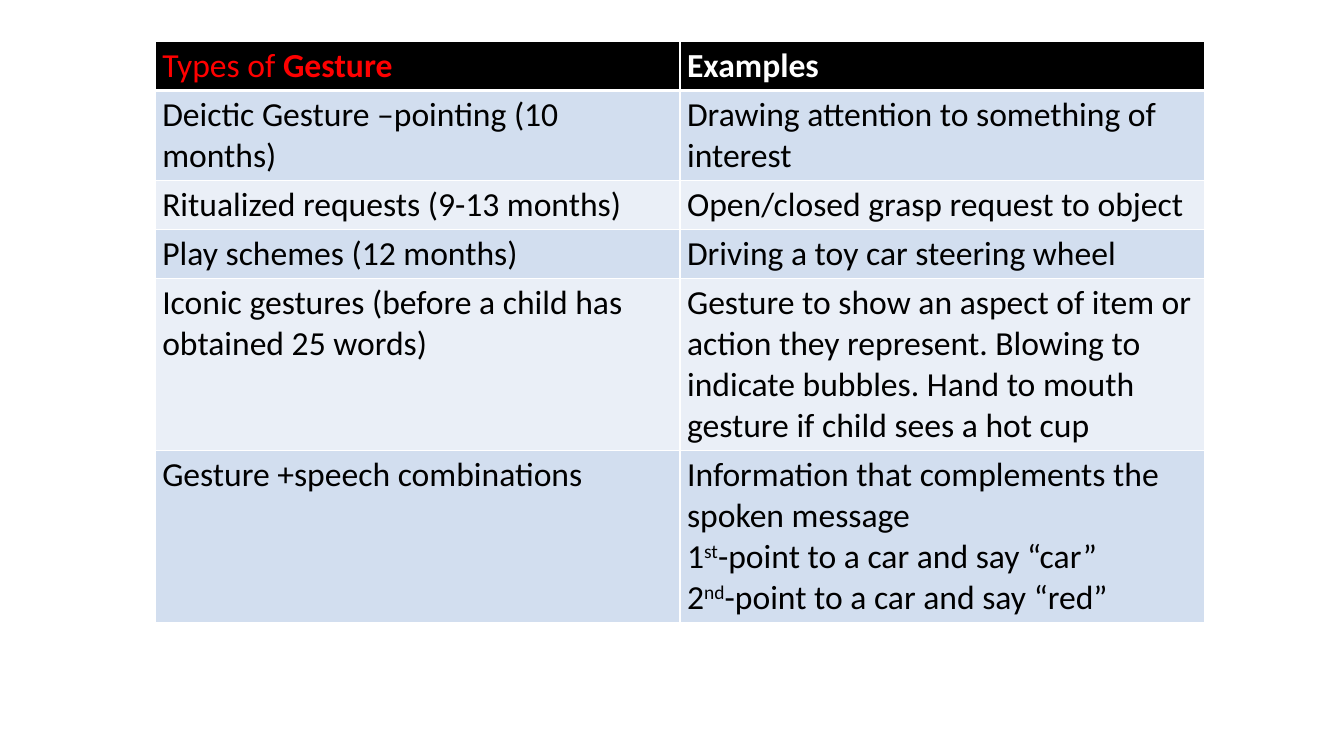
from dataclasses import dataclass

from lxml.etree import SubElement
from pptx import Presentation
from pptx.dml.color import RGBColor
from pptx.oxml.ns import qn
from pptx.table import _Cell
from pptx.util import Inches, Length, Pt

BLACK = RGBColor(0x00, 0x00, 0x00)
WHITE = RGBColor(0xFF, 0xFF, 0xFF)
RED = RGBColor(0xFF, 0x00, 0x00)
BAND_DARK = RGBColor(0xD2, 0xDE, 0xEF)
BAND_LIGHT = RGBColor(0xEA, 0xEF, 0xF7)

SLIDE_WIDTH = Inches(13.33)
SLIDE_HEIGHT = Inches(7.5)
THIN, THICK = Pt(1), Pt(3)


@dataclass(frozen=True)
class Span:
    text: str
    color: RGBColor = BLACK
    bold: bool = False
    raised: bool = False


Paragraphs = list[list[Span]]


@dataclass(frozen=True)
class GestureRow:
    height: float
    kind: Paragraphs
    example: Paragraphs


def plain(text: str) -> Paragraphs:
    return [[Span(text)]]


def ordinal(number: str, suffix: str, rest: str) -> list[Span]:
    return [Span(number), Span(suffix, raised=True), Span(rest)]


ROWS = [
    GestureRow(
        0.05,
        [[Span("Types of ", RED), Span("Gesture", RED, bold=True)]],
        [[Span("Examples", WHITE, bold=True)]],
    ),
    GestureRow(
        0.113,
        plain("Deictic Gesture –pointing (10 months)"),
        plain("Drawing attention to something of interest"),
    ),
    GestureRow(
        0.064,
        plain("Ritualized requests (9-13 months)"),
        plain("Open/closed grasp request to object"),
    ),
    GestureRow(
        0.064,
        plain("Play schemes (12 months)"),
        plain("Driving a toy car steering wheel"),
    ),
    GestureRow(
        0.21,
        plain("Iconic gestures (before a child has obtained 25 words)"),
        plain(
            "Gesture to show an aspect of item or action they represent. "
            "Blowing to indicate bubbles. Hand to mouth gesture if child sees a hot cup"
        ),
    ),
    GestureRow(
        0.21,
        plain("Gesture +speech combinations"),
        [
            [Span("Information that complements the spoken message")],
            ordinal("1", "st", "-point to a car and say “car”"),
            ordinal("2", "nd", "-point to a car and say “red”"),
        ],
    ),
]


def across(share: float) -> Length:
    return Length(round(SLIDE_WIDTH * share))


def down(share: float) -> Length:
    return Length(round(SLIDE_HEIGHT * share))


def draw_borders(cell: _Cell, top: Length, bottom: Length) -> None:
    properties = cell._tc.get_or_add_tcPr()
    for side, width in (("L", THIN), ("R", THIN), ("T", top), ("B", bottom)):
        line = SubElement(properties, qn(f"a:ln{side}"), w=str(width))
        fill = SubElement(line, qn("a:solidFill"))
        SubElement(fill, qn("a:srgbClr"), val=str(WHITE))


def write_text(cell: _Cell, paragraphs: Paragraphs) -> None:
    frame = cell.text_frame
    for index, spans in enumerate(paragraphs):
        para = frame.add_paragraph() if index else frame.paragraphs[0]
        for span in spans:
            run = para.add_run()
            run.text = span.text
            run.font.name = "Calibri"
            run.font.size = Pt(24)
            run.font.bold = span.bold
            run.font.color.rgb = span.color
            if span.raised:
                run._r.get_or_add_rPr().set("baseline", "30000")


def row_fill(index: int) -> RGBColor:
    if index == 0:
        return BLACK
    return BAND_DARK if index % 2 else BAND_LIGHT


def main() -> None:
    deck = Presentation()
    deck.slide_width, deck.slide_height = SLIDE_WIDTH, SLIDE_HEIGHT
    page = deck.slides.add_slide(deck.slide_layouts[6])

    total_height = down(sum(row.height for row in ROWS))
    table = page.shapes.add_table(
        len(ROWS), 2, across(0.1155), down(0.055), across(0.781), total_height
    ).table
    table.first_row = False
    table.horz_banding = False

    for index, row in enumerate(ROWS):
        table.rows[index].height = down(row.height)
        for column, paragraphs in enumerate((row.kind, row.example)):
            cell = table.cell(index, column)
            cell.margin_left = cell.margin_right = Inches(0.07)
            cell.margin_top = cell.margin_bottom = Inches(0.04)
            draw_borders(
                cell,
                top=THICK if index == 1 else THIN,
                bottom=THICK if index == 0 else THIN,
            )
            cell.fill.solid()
            cell.fill.fore_color.rgb = row_fill(index)
            write_text(cell, paragraphs)

    deck.save("out.pptx")


if __name__ == "__main__":
    main()
